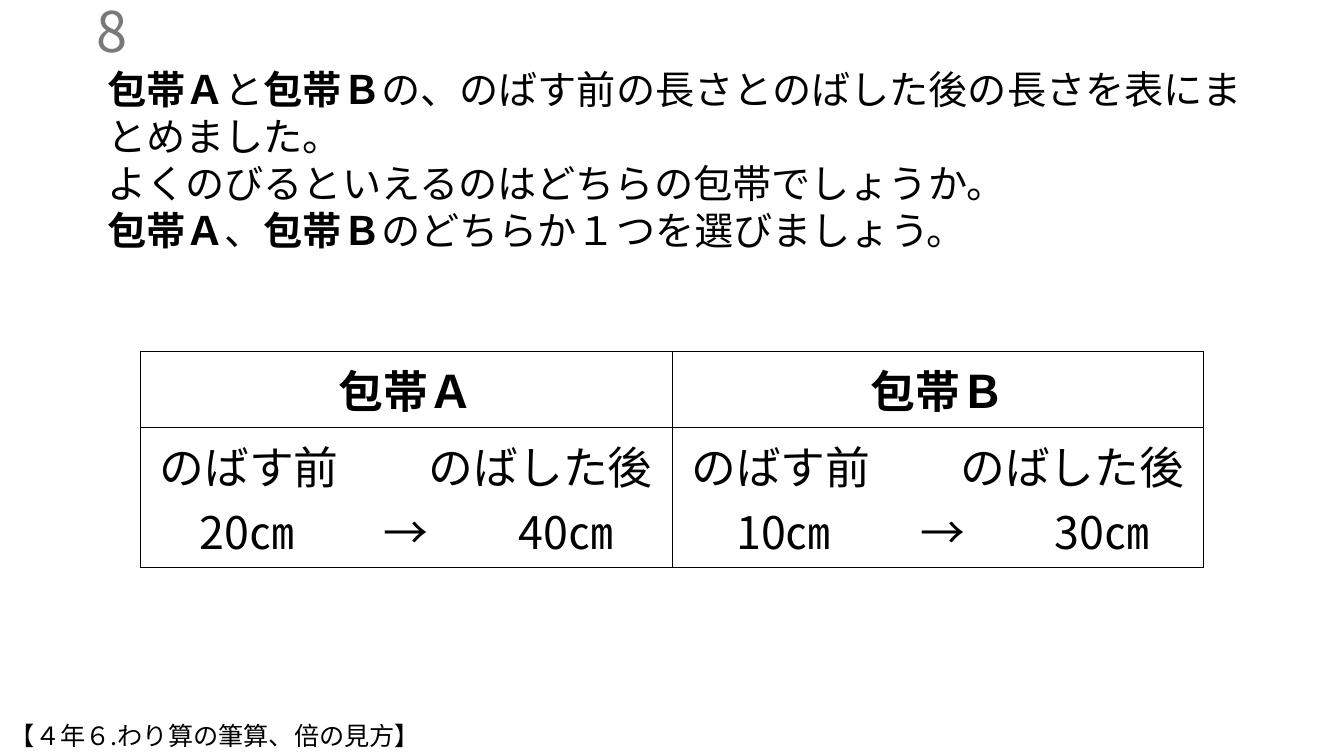
from lxml import etree
from pptx import Presentation
from pptx.dml import color
from pptx.enum import text
from pptx.oxml import ns
from pptx.util import Pt

FONT = "Noto Sans CJK JP"
BLACK = "000000"
LEFT, CENTER, RIGHT = text.PP_ALIGN.LEFT, text.PP_ALIGN.CENTER, text.PP_ALIGN.RIGHT
GAP = "　"  # one full-width space, widened by character spacing


def rgb(value):
    return color.RGBColor.from_string(value)


def add_child(parent, tag, **attributes):
    return etree.SubElement(parent, ns.qn(tag), attributes)


def set_east_asian(properties):
    """Use the slide font for Japanese characters too."""
    latin = properties.find(ns.qn("a:latin"))
    latin.addnext(properties.makeelement(ns.qn("a:ea"), {"typeface": FONT}))


def write_paragraph(para, parts, size, tint=BLACK, align=LEFT, indent=0):
    """Write (wording, bold) parts; the indent is in points."""
    para.alignment = align
    for wording, bold in parts:
        span = para.add_run()
        span.text = wording
        span.font.bold = bold
        span.font.name = FONT
        set_east_asian(span.font._element)
        if wording == GAP:
            span.font._element.set("spc", str(size * 100))
    if indent:
        para._p.get_or_add_pPr().set("marL", str(Pt(indent)))
    para.font.size = Pt(size)
    para.font.color.rgb = rgb(tint)


def add_text(page, left, top, width, height, lines, size, tint=BLACK, align=LEFT,
             anchor=text.MSO_ANCHOR.TOP):
    box = page.shapes.add_textbox(Pt(left), Pt(top), Pt(width), Pt(height))
    frame = box.text_frame
    frame.word_wrap = True
    frame.vertical_anchor = anchor
    for number, parts in enumerate(lines):
        para = frame.add_paragraph() if number else frame.paragraphs[0]
        write_paragraph(para, parts, size, tint, align)


def style_cell(cell):
    """Unfilled cell with a thin black border on every side."""
    properties = cell._tc.get_or_add_tcPr()
    for side in ("a:lnL", "a:lnR", "a:lnT", "a:lnB"):
        line = add_child(properties, side, w=str(Pt(1)))
        add_child(add_child(line, "a:solidFill"), "a:srgbClr", val=BLACK)
    cell.fill.background()


def spread(*words):
    """Plain parts with a wide gap between neighbours."""
    parts = [(words[0], False)]
    for word in words[1:]:
        parts += [(GAP, False), (word, False)]
    return parts


def add_bandage_table(page, bandages):
    frame = page.shapes.add_table(2, len(bandages), Pt(100.3), Pt(251.2), Pt(759.6), Pt(154))
    table = frame.table
    table.first_row = table.horz_banding = False
    table.rows[0].height, table.rows[1].height = Pt(54), Pt(100)
    for column, (name, before, after, indent) in enumerate(bandages):
        heading, lengths = table.cell(0, column), table.cell(1, column)
        style_cell(heading)
        style_cell(lengths)
        write_paragraph(heading.text_frame.paragraphs[0], [(name, True)], 32, align=CENTER)
        body = lengths.text_frame
        write_paragraph(body.paragraphs[0], spread("のばす前", "のばした後"), 32, align=CENTER)
        write_paragraph(body.add_paragraph(), spread(before, "→", after), 32,
                        align=CENTER, indent=indent)


def main():
    deck = Presentation()
    deck.slide_width, deck.slide_height = Pt(960), Pt(540)
    page = deck.slides.add_slide(deck.slide_layouts[6])

    # Question number
    add_text(page, 0, 7.2, 98, 28.8, [[("8", False)]], 40, "797979", RIGHT,
             text.MSO_ANCHOR.MIDDLE)

    # Lengths before and after stretching
    add_bandage_table(page, [("包帯Ａ", "20㎝", "40㎝", 0),
                             ("包帯Ｂ", "10㎝", "30㎝", 7)])

    # Question
    first, second = ("包帯Ａ", True), ("包帯Ｂ", True)
    add_text(page, 69.5, 42.9, 830.2, 143.3, [
        [first, ("と", False), second,
         ("の、のばす前の長さとのばした後の長さを表にまとめました。", False)],
        [("よくのびるといえるのはどちらの包帯でしょうか。", False)],
        [first, ("、", False), second, ("のどちらか１つを選びましょう。", False)],
    ], 28)

    # Unit name
    add_text(page, 0, 511.2, 539.3, 28.8, [[("【４年６.わり算の筆算、倍の見方】", False)]], 18)

    deck.save("out.pptx")


if __name__ == "__main__":
    main()
